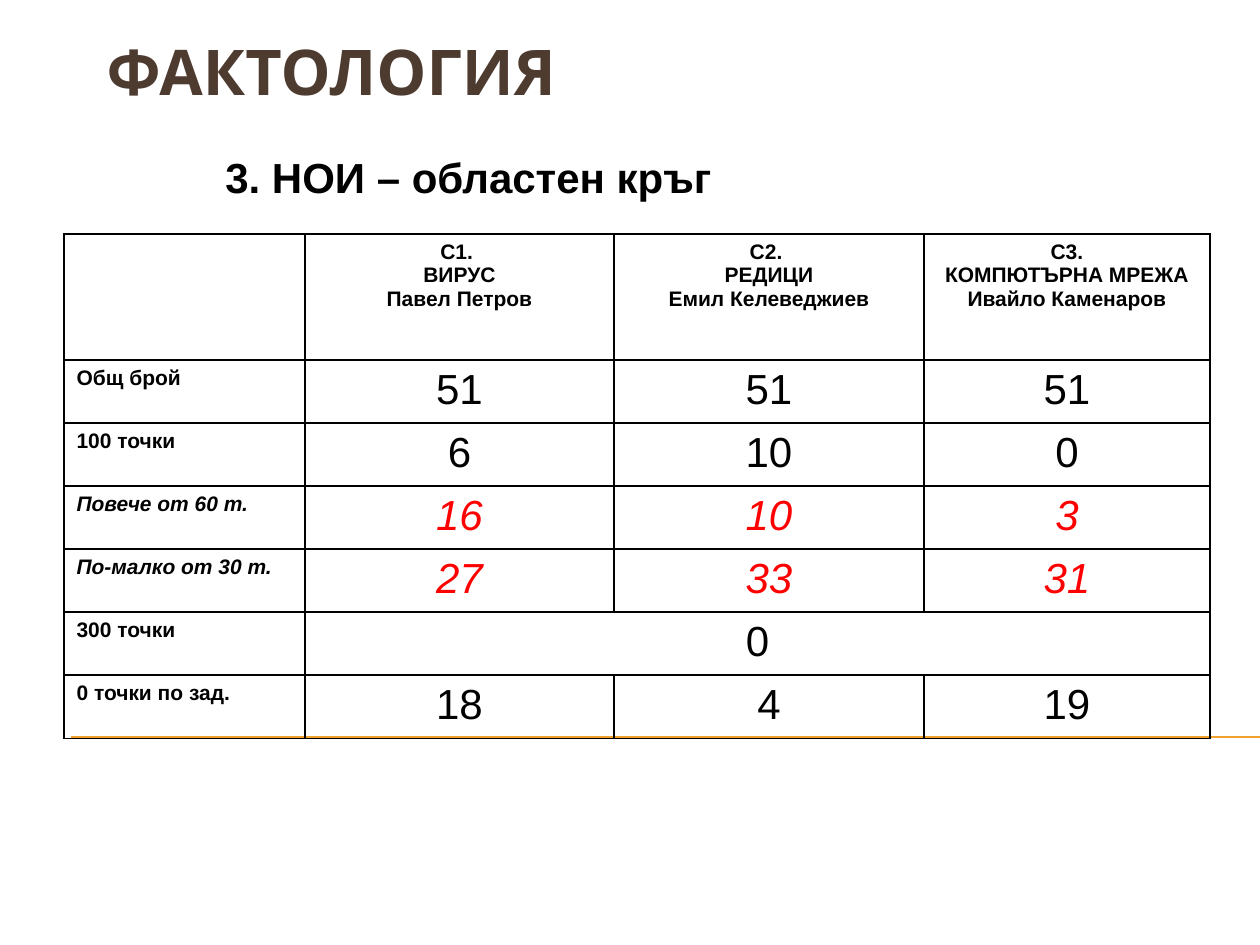
from lxml import etree
from pptx import Presentation
from pptx import util as u
from pptx.dml import color
from pptx.enum import shapes, text
from pptx.oxml import ns

PX = u.Inches(1) / 126
COLORS = {"title": "4E3B30", "ink": "000000", "alert": "FF0000", "rule": "F0A22E"}
COLUMNS = [241, 309, 310, 286]
HEADER_HEIGHT, ROW_HEIGHT = 126, 63
HEADERS = [
    "",
    "С1. \nВИРУС\nПавел Петров",
    "С2. \nРЕДИЦИ\nЕмил Келеведжиев",
    "С3.\nКОМПЮТЪРНА МРЕЖА\nИвайло Каменаров",
]
RESULTS = [
    ("Общ брой", ["51", "51", "51"], False),
    ("100 точки", ["6", "10", "0"], False),
    ("Повече от 60 т.", ["16", "10", "3"], True),
    ("По-малко от 30 т.", ["27", "33", "31"], True),
    ("300 точки", ["0"], False),
    ("0 точки по зад.", ["18", "4", "19"], False),
]


def px(value):
    return u.Emu(round(value * PX))


def rgb(name):
    return color.RGBColor.from_string(COLORS[name])


def write(frame, content, size=12, font="Arial", ink="ink", bold=False,
          italic=False, align=text.PP_ALIGN.LEFT):
    frame.text = content
    for para in frame.paragraphs:
        para.alignment = align
        para.font.size = u.Pt(size)
        for span in para.runs:
            span.font.name = font
            span.font.size = u.Pt(size)
            span.font.bold = bold
            span.font.italic = italic
            span.font.color.rgb = rgb(ink)


def add_rule(page):
    rule = page.shapes.add_connector(
        shapes.MSO_CONNECTOR.STRAIGHT, px(71), px(737), px(1260), px(737))
    rule.line.color.rgb = rgb("rule")
    rule.line.width = u.Pt(0.75)
    etree.SubElement(rule.element.spPr, ns.qn("a:effectLst"))


def add_title(page):
    box = page.shapes.title
    box.left, box.top, box.width, box.height = map(px, (94, 26, 1091, 129))
    frame = box.text_frame
    frame.vertical_anchor = text.MSO_ANCHOR.TOP
    frame.auto_size = text.MSO_AUTO_SIZE.NONE
    write(frame, "ФАКТОЛОГИЯ", size=36, font="Karla", ink="title", bold=True)


def add_heading(page):
    box = page.shapes.add_textbox(*map(px, (213, 145, 528, 64)))
    frame = box.text_frame
    frame.word_wrap = False
    frame.vertical_anchor = text.MSO_ANCHOR.MIDDLE
    write(frame, "3. НОИ – областен кръг", size=24, bold=True)


def style_cell(cell):
    properties = cell._tc.get_or_add_tcPr()
    for side in ("lnL", "lnR", "lnT", "lnB"):
        border = etree.SubElement(properties, ns.qn(f"a:{side}"), w=str(u.Pt(1)))
        fill = etree.SubElement(border, ns.qn("a:solidFill"))
        etree.SubElement(fill, ns.qn("a:srgbClr"), val=COLORS["ink"])
    cell.fill.background()


def add_results(page):
    rows = len(RESULTS) + 1
    height = HEADER_HEIGHT + ROW_HEIGHT * len(RESULTS)
    table = page.shapes.add_table(
        rows, len(COLUMNS), px(64), px(234), px(sum(COLUMNS)), px(height)).table
    table.first_row = table.horz_banding = False
    for column, width in zip(table.columns, COLUMNS):
        column.width = px(width)
    for index, row in enumerate(table.rows):
        row.height = px(ROW_HEIGHT if index else HEADER_HEIGHT)
    for cell in table.iter_cells():
        style_cell(cell)
    center = text.PP_ALIGN.CENTER
    for index, header in enumerate(HEADERS):
        write(table.cell(0, index).text_frame, header, bold=True, align=center)
    for index, (label, values, marked) in enumerate(RESULTS, 1):
        write(table.cell(index, 0).text_frame, label, bold=True, italic=marked)
        if len(values) == 1:
            table.cell(index, 1).merge(table.cell(index, len(COLUMNS) - 1))
        for column, value in enumerate(values, 1):
            write(table.cell(index, column).text_frame, value, size=24,
                  ink="alert" if marked else "ink", italic=marked, align=center)


def main():
    deck = Presentation()
    deck.slide_width, deck.slide_height = px(1260), px(945)
    page = deck.slides.add_slide(deck.slide_layouts[0])
    subtitle = page.placeholders[1].element
    subtitle.getparent().remove(subtitle)
    add_rule(page)
    add_title(page)
    add_heading(page)
    add_results(page)
    deck.save("out.pptx")


if __name__ == "__main__":
    main()
